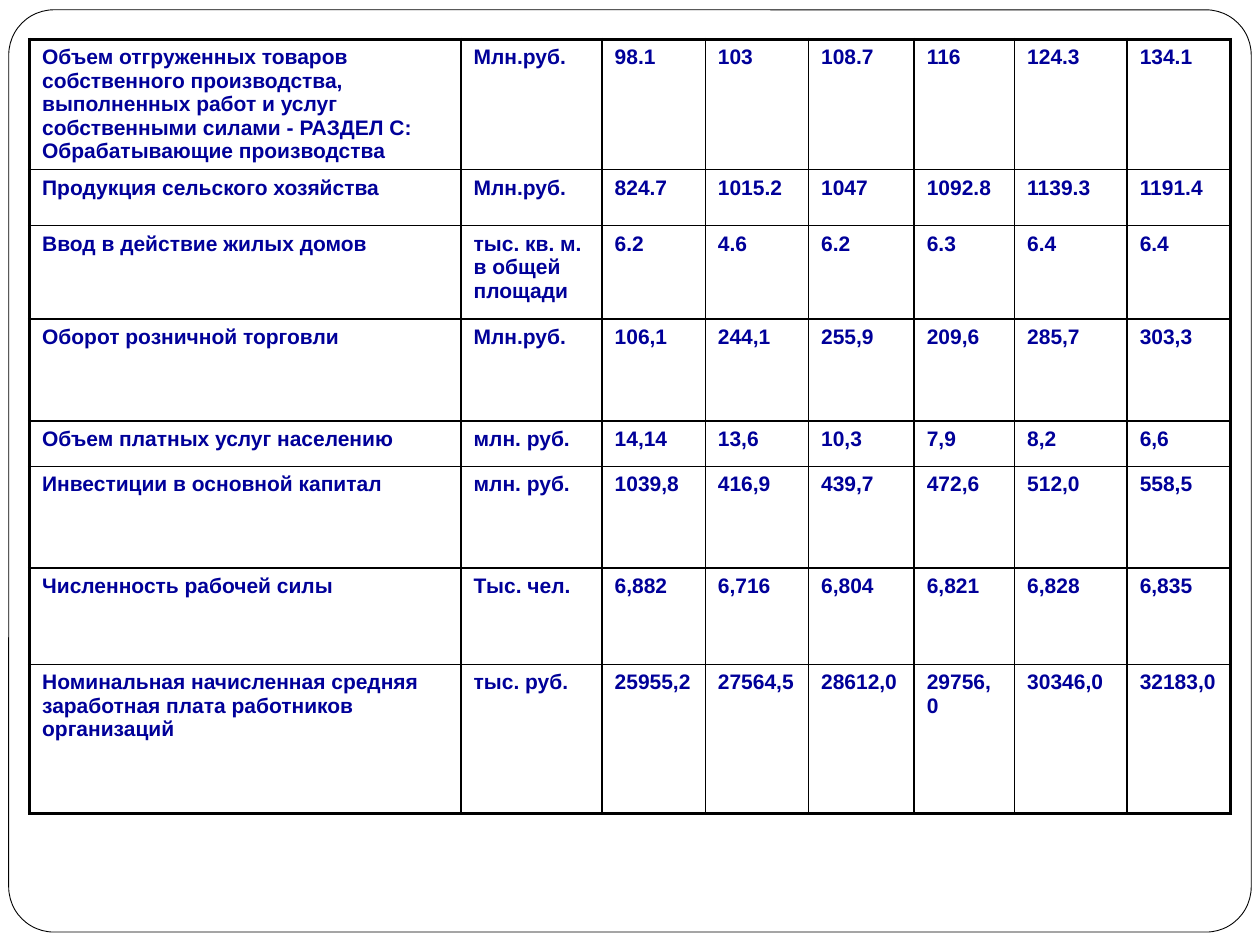
from lxml import etree
from pptx import Presentation
from pptx import util as u
from pptx.dml.color import RGBColor
from pptx.enum import shapes
from pptx.oxml import ns

BLACK = RGBColor(0x00, 0x00, 0x00)
WHITE = RGBColor(0xFF, 0xFF, 0xFF)
NAVY = RGBColor(0x00, 0x00, 0x99)
THIN, THICK = u.Pt(1), u.Pt(2.25)

COLUMN_WIDTHS = [246.6, 80.6, 59, 59, 60.4, 57.4, 64.3, 59.2]
ROW_HEIGHTS = [73.8, 32, 53.2, 58.3, 26, 58.3, 54.9, 85.4]
INDICATORS = [
    ["Объем отгруженных товаров собственного производства, выполненных работ и услуг "
     "собственными силами - РАЗДЕЛ С: Обрабатывающие производства",
     "Млн.руб.", "98.1", "103", "108.7", "116", "124.3", "134.1"],
    ["Продукция сельского хозяйства",
     "Млн.руб.", "824.7", "1015.2", "1047", "1092.8", "1139.3", "1191.4"],
    ["Ввод в действие жилых домов",
     "тыс. кв. м. в общей площади", "6.2", "4.6", "6.2", "6.3", "6.4", "6.4"],
    ["Оборот розничной торговли",
     "Млн.руб.", "106,1", "244,1", "255,9", "209,6", "285,7", "303,3"],
    ["Объем платных услуг населению",
     "млн. руб.", "14,14", "13,6", "10,3", "7,9", "8,2", "6,6"],
    ["Инвестиции в основной капитал",
     "млн. руб.", "1039,8", "416,9", "439,7", "472,6", "512,0", "558,5"],
    ["Численность рабочей силы",
     "Тыс. чел.", "6,882", "6,716", "6,804", "6,821", "6,828", "6,835"],
    ["Номинальная начисленная средняя заработная плата работников организаций",
     "тыс. руб.", "25955,2", "27564,5", "28612,0", "29756,0", "30346,0", "32183,0"],
]


def add_frame(page):
    """Draw the rounded outline around the page."""
    frame = page.shapes.add_shape(shapes.MSO_SHAPE.ROUNDED_RECTANGLE,
                                  u.Pt(5), u.Pt(5.6), u.Pt(710), u.Pt(527))
    frame.adjustments[0] = 0.049
    frame.shadow.inherit = False
    frame.fill.solid()
    frame.fill.fore_color.rgb = WHITE
    frame.line.color.rgb = BLACK
    frame.line.width = u.Pt(0.5)


def add_border(cell, side, width):
    """Add a solid black border to one side (L, R, T or B) of a cell."""
    properties = cell._tc.get_or_add_tcPr()
    line = etree.SubElement(properties, ns.qn(f"a:ln{side}"), w=str(width))
    fill = etree.SubElement(line, ns.qn("a:solidFill"))
    etree.SubElement(fill, ns.qn("a:srgbClr"), val=str(BLACK))


def fill_cell(cell, words):
    """Write bold navy text into an unfilled cell."""
    cell.fill.background()
    span = cell.text_frame.paragraphs[0].add_run()
    span.text = words
    span.font.name = "Arial"
    span.font.size = u.Pt(12)
    span.font.bold = True
    span.font.color.rgb = NAVY


def add_indicator_table(page):
    """Add the table of indicators with a thick outer border."""
    last_row, last_column = len(ROW_HEIGHTS) - 1, len(COLUMN_WIDTHS) - 1
    table = page.shapes.add_table(
        len(ROW_HEIGHTS), len(COLUMN_WIDTHS), u.Pt(16.9), u.Pt(22.6),
        u.Pt(sum(COLUMN_WIDTHS)), u.Pt(sum(ROW_HEIGHTS))).table
    table.first_row = table.horz_banding = False
    for column, width in zip(table.columns, COLUMN_WIDTHS):
        column.width = u.Pt(width)
    for row, height in zip(table.rows, ROW_HEIGHTS):
        row.height = u.Pt(height)
    for i, values in enumerate(INDICATORS):
        for j, words in enumerate(values):
            cell = table.cell(i, j)
            outer = {"L": j == 0, "R": j == last_column, "T": i == 0, "B": i == last_row}
            for side, is_outer in outer.items():
                add_border(cell, side, THICK if is_outer else THIN)
            fill_cell(cell, words)


def main():
    """Build the slide and save it."""
    deck = Presentation()
    deck.slide_width, deck.slide_height = u.Pt(720), u.Pt(540)
    page = deck.slides.add_slide(deck.slide_layouts[6])
    add_frame(page)
    add_indicator_table(page)
    deck.save("out.pptx")


if __name__ == "__main__":
    main()
